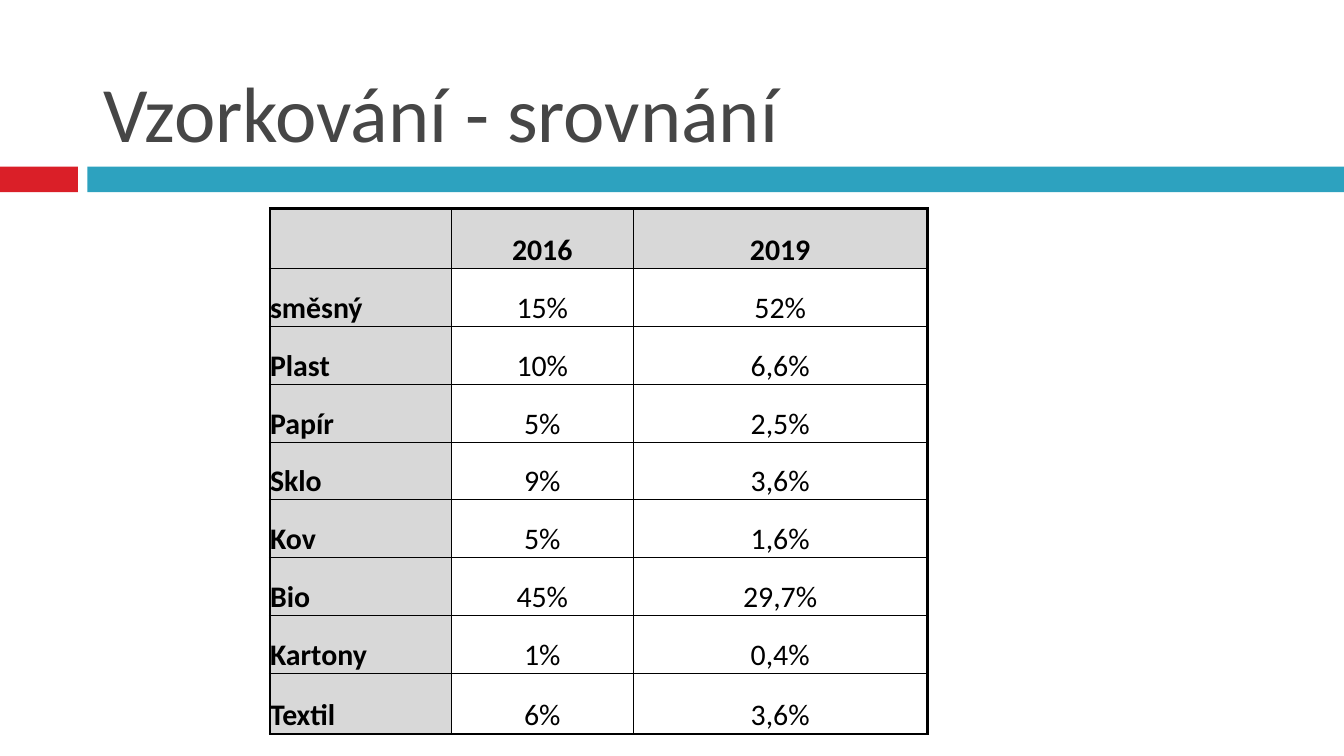
import lxml.etree
import pptx
import pptx.dml.color
import pptx.enum.shapes
import pptx.enum.text
import pptx.oxml.ns
import pptx.util

FONT = "Calibri"
INK = "000000"
HEADER_GREY = "D8D8D8"
THICK, THIN = 1.5, 0.5


def colour(hex_value):
    return pptx.dml.color.RGBColor.from_string(hex_value)


def add_border(cell, side, points):
    """Draw one side of a cell: L, R, T or B, in that order."""
    qn = pptx.oxml.ns.qn
    line = lxml.etree.SubElement(
        cell._tc.get_or_add_tcPr(), qn(f"a:ln{side}"), w=str(pptx.util.Pt(points)))
    fill = lxml.etree.SubElement(line, qn("a:solidFill"))
    lxml.etree.SubElement(fill, qn("a:srgbClr"), val=INK)


deck = pptx.Presentation()
deck.slide_width = pptx.util.Inches(10)
deck.slide_height = deck.slide_width * 9 // 16
slide = deck.slides.add_slide(deck.slide_layouts[5])
inches = pptx.util.Inches

# Two-part band under the title
band_top, band_height = inches(1.24), inches(0.19)
for left, width, band_fill in ((0, 0.58, "DA1F28"), (0.65, 9.35, "2DA2BF")):
    band = slide.shapes.add_shape(
        pptx.enum.shapes.MSO_SHAPE.RECTANGLE,
        inches(left), band_top, inches(width), band_height)
    band.shadow.inherit = False
    band.fill.solid()
    band.fill.fore_color.rgb = colour(band_fill)
    band.line.fill.background()

# Title
heading = slide.shapes.title
heading.left, heading.top = inches(0.67), inches(0.13)
heading.width, heading.height = inches(8.92), inches(1.1)
heading.text_frame.vertical_anchor = pptx.enum.text.MSO_ANCHOR.BOTTOM
heading_line = heading.text_frame.paragraphs[0]
heading_line.alignment = pptx.enum.text.PP_ALIGN.LEFT
heading_run = heading_line.add_run()
heading_run.text = "Vzorkování - srovnání"
heading_run.font.name = FONT
heading_run.font.size = pptx.util.Pt(42)
heading_run.font.color.rgb = colour("464646")

# Waste shares by year
waste_shares = [
    ("", "2016", "2019"),
    ("směsný", "15%", "52%"),
    ("Plast", "10%", "6,6%"),
    ("Papír", "5%", "2,5%"),
    ("Sklo", "9%", "3,6%"),
    ("Kov", "5%", "1,6%"),
    ("Bio", "45%", "29,7%"),
    ("Kartony", "1%", "0,4%"),
    ("Textil", "6%", "3,6%"),
]
column_widths = (1.35, 1.35, 2.19)
last_row, last_column = len(waste_shares) - 1, len(column_widths) - 1
table = slide.shapes.add_table(
    len(waste_shares), len(column_widths),
    inches(2.01), inches(1.55), inches(4.88), inches(3.94)).table
table.first_row = table.horz_banding = False
for column, width in zip(table.columns, column_widths):
    column.width = inches(width)

for r, shares in enumerate(waste_shares):
    table.rows[r].height = inches(0.45 if r in (0, last_row) else 0.43)
    for c, entry in enumerate(shares):
        cell = table.cell(r, c)
        is_header = r == 0 or c == 0
        cell.margin_left = cell.margin_right = 0
        cell.margin_top = cell.margin_bottom = 0
        cell.vertical_anchor = pptx.enum.text.MSO_ANCHOR.BOTTOM
        for side, on_edge in (("L", c == 0), ("R", c == last_column),
                              ("T", r == 0), ("B", r == last_row)):
            add_border(cell, side, THICK if on_edge else THIN)
        if is_header:
            cell.fill.solid()
            cell.fill.fore_color.rgb = colour(HEADER_GREY)
        else:
            cell.fill.background()
        if entry:
            line = cell.text_frame.paragraphs[0]
            line.alignment = (pptx.enum.text.PP_ALIGN.CENTER if c
                              else pptx.enum.text.PP_ALIGN.LEFT)
            run = line.add_run()
            run.text = entry
            run.font.name = FONT
            run.font.size = pptx.util.Pt(16)
            run.font.bold = is_header
            run.font.color.rgb = colour(INK)

deck.save("out.pptx")
